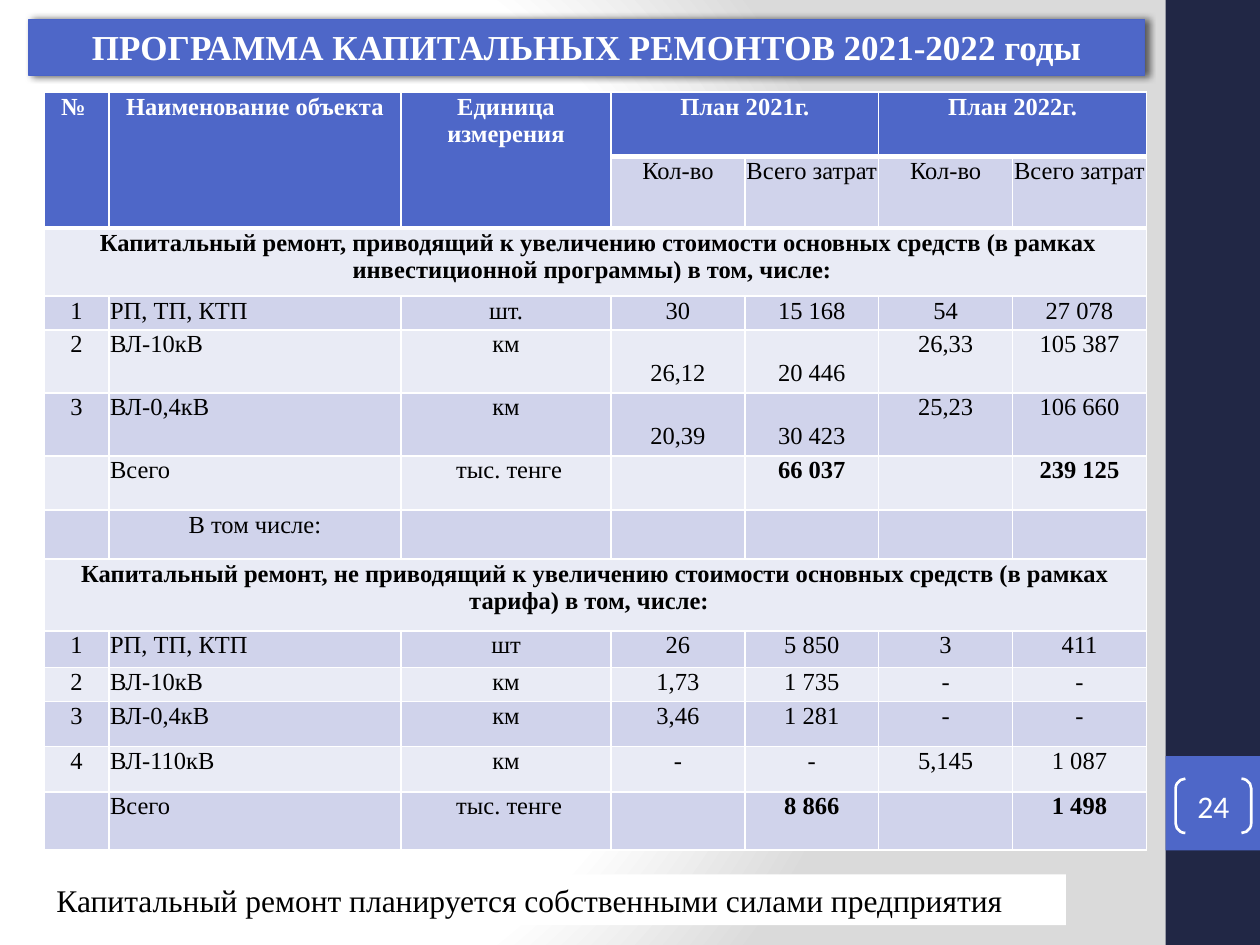
from lxml import etree
from pptx import Presentation
from pptx.dml.color import RGBColor
from pptx.enum.shapes import MSO_SHAPE
from pptx.enum.text import MSO_ANCHOR, MSO_AUTO_SIZE, PP_ALIGN
from pptx.oxml import parse_xml
from pptx.oxml.ns import nsdecls, qn
from pptx.util import Pt

RECT, BRACKET = MSO_SHAPE.RECTANGLE, MSO_SHAPE.DOUBLE_BRACKET
LEFT, CENTER = PP_ALIGN.LEFT, PP_ALIGN.CENTER
TOP, MIDDLE = MSO_ANCHOR.TOP, MSO_ANCHOR.MIDDLE
FIXED = MSO_AUTO_SIZE.NONE
SERIF, SANS = "Times New Roman", "Calibri"
BLUE, NAVY, WHITE, BLACK = "4E67C8", "212745", "FFFFFF", "000000"
DARK, PALE = "D0D3EB", "E9EBF5"

COLS = [37, 167, 120] + [76.5] * 4
ROWS = [36.7, 41, 38.9, 19.4, 36, 36, 31, 28, 41, 20.9, 19.4, 25.9, 25.9, 33.1]
HEAD, SUB = 0, 1
SECTIONS, TOTALS, LOWERED = (2, 8), (6, 13), (4, 5)
MERGES = [(0, 0, 1, 0), (0, 1, 1, 1), (0, 2, 1, 2), (0, 3, 0, 4), (0, 5, 0, 6)]
MERGES += [(row, 0, row, 6) for row in SECTIONS]
LINE = 16  # height of one line of 14 pt text
DATA = [
    ["№ ", "Наименование объекта", "Единица измерения", "План 2021г.", "", "План 2022г.", ""],
    ["", "", "", "Кол-во", "Всего затрат", "Кол-во", "Всего затрат"],
    [" Капитальный ремонт, приводящий к увеличению стоимости основных средств "
     "(в рамках инвестиционной программы) в том, числе: "],
    ["1", "РП, ТП, КТП", "шт.", "30", "15 168", "54", "27 078"],
    ["2", "ВЛ-10кВ", "км", "26,12", "20 446", "26,33", "105 387"],
    ["3", "ВЛ-0,4кВ", "км", "20,39", "30 423", "25,23", "106 660"],
    ["", "Всего", " тыс. тенге", "", "66 037", "", "239 125"],
    ["", "В том числе:", "", "", "", "", ""],
    ["Капитальный ремонт, не приводящий к увеличению стоимости основных средств "
     "(в рамках тарифа) в том, числе:  "],
    ["1", "РП, ТП, КТП", "шт", "26", "5 850", "3", "411"],
    ["2", "ВЛ-10кВ", "км", "1,73", "1 735", "-", "-"],
    ["3", "ВЛ-0,4кВ", "км", "3,46", "1 281", "-", "-"],
    ["4", "ВЛ-110кВ", "км", "-", "-", "5,145", "1 087"],
    ["", "Всего", " тыс. тенге", "", "8 866", "", "1 498"],
]


def rgb(code):
    return RGBColor.from_string(code)


def write(frame, text, size, color, align=CENTER, bold=False, face=SERIF):
    frame.text = text
    para = frame.paragraphs[0]
    para.alignment = align
    font = para.font
    font.name, font.size, font.bold = face, Pt(size), bold
    font.color.rgb = rgb(color)


def block(slide, kind, box, fill=None, line=None):
    shape = slide.shapes.add_shape(kind, *map(Pt, box))
    shape.shadow.inherit = False
    if fill:
        shape.fill.solid()
        shape.fill.fore_color.rgb = rgb(fill)
    else:
        shape.fill.background()
    if line:
        shape.line.color.rgb = rgb(line)
        shape.line.width = Pt(1.5)
    else:
        shape.line.fill.background()
    return shape


def backdrop(slide):
    """White on the left, fading to grey on the right."""
    stops = "".join(
        f'<a:gs pos="{pos}000"><a:srgbClr val="{color}"/></a:gs>'
        for pos, color in ((0, WHITE), (75, WHITE), (100, "DADADA")))
    slide.background.fill.solid()
    props = next(slide.element.iter(qn("p:bgPr")))
    props.replace(props[0], parse_xml(
        f'<a:gradFill rotWithShape="1" {nsdecls("a")}><a:gsLst>{stops}</a:gsLst>'
        '<a:path path="circle"><a:fillToRect l="20000" t="50000" r="100000" b="50000"/>'
        '</a:path></a:gradFill>'))


def sidebar(slide, box, number):
    left, top, wide, high = box
    block(slide, RECT, box, NAVY)
    square = top + high * 0.8
    block(slide, RECT, (left, square, wide, wide), BLUE)
    mark = block(slide, BRACKET, (left + 5.8, square + 13, wide - 10.8, 31), line=WHITE)
    mark.adjustments[0] = 0.18
    frame = mark.text_frame
    frame.margin_left = frame.margin_right = frame.margin_top = frame.margin_bottom = 0
    frame.vertical_anchor = MIDDLE
    write(frame, number, 18, WHITE, face=SANS)


def heading(slide, box, text):
    title = slide.shapes.title
    title.left, title.top, title.width, title.height = map(Pt, box)
    title.fill.solid()
    title.fill.fore_color.rgb = rgb(BLUE)
    title.line.color.rgb = rgb("4963C7")
    title.line.width = Pt(1)
    title.element.spPr.append(parse_xml(
        f'<a:effectLst {nsdecls("a")}><a:outerShdw blurRad="{Pt(4)}" dist="{Pt(2)}" dir="0">'
        '<a:srgbClr val="000000"><a:alpha val="60000"/></a:srgbClr>'
        '</a:outerShdw></a:effectLst>'))
    frame = title.text_frame
    frame.auto_size = FIXED
    frame.vertical_anchor = TOP
    write(frame, text, 20, WHITE, bold=True)


def border(cell, row):
    """White edges, thick below the two header rows."""
    props = cell._tc.get_or_add_tcPr()
    for side, thick in (("L", False), ("R", False),
                        ("T", row in (1, 2)), ("B", row in (HEAD, SUB))):
        line = etree.SubElement(props, qn(f"a:ln{side}"), w=str(Pt(3 if thick else 1)))
        fill = etree.SubElement(line, qn("a:solidFill"))
        etree.SubElement(fill, qn("a:srgbClr"), val=WHITE)


def style(cell, row, col, text):
    head = row == HEAD or (row == SUB and col < 3)
    drop = LINE if row in LOWERED and col in (3, 4) else 0
    cell.margin_left = cell.margin_right = Pt(0.7)
    cell.margin_top, cell.margin_bottom = Pt(0.7 + drop), 0
    border(cell, row)
    cell.fill.solid()
    cell.fill.fore_color.rgb = rgb(BLUE if head else DARK if row % 2 else PALE)
    bold = head or row in SECTIONS or (row in TOTALS and col > 2)
    named = col == 1 and row > SUB and text != "В том числе:"
    write(cell.text_frame, text, 14, WHITE if head else BLACK, LEFT if named else CENTER, bold)


def plan(slide, left, top):
    box = map(Pt, (left, top, sum(COLS), sum(ROWS)))
    table = slide.shapes.add_table(len(ROWS), len(COLS), *box).table
    for col, wide in zip(table.columns, COLS):
        col.width = Pt(wide)
    for row, high in zip(table.rows, ROWS):
        row.height = Pt(high)
    for row, texts in enumerate(DATA):
        for col in range(len(COLS)):
            text = texts[col] if col < len(texts) else ""
            style(table.cell(row, col), row, col, text)
    for row, col, last, end in MERGES:
        table.cell(row, col).merge(table.cell(last, end))


def note(slide, box, text):
    frame = block(slide, RECT, box, WHITE).text_frame
    frame.word_wrap = True
    frame.vertical_anchor = TOP
    write(frame, text, 18, BLACK, LEFT)


def main():
    deck = Presentation()
    deck.slide_width, deck.slide_height = Pt(720), Pt(540)
    slide = deck.slides.add_slide(deck.slide_layouts[5])
    backdrop(slide)
    sidebar(slide, (666, 0, 54, 540), "24")
    heading(slide, (16.5, 11.2, 637.5, 32), "ПРОГРАММА КАПИТАЛЬНЫХ РЕМОНТОВ 2021-2022 годы")
    note(slide, (25.2, 499.7, 584, 29), "Капитальный ремонт планируется собственными силами предприятия")
    plan(slide, 25.2, 52.6)
    deck.save("out.pptx")


if __name__ == "__main__":
    main()
